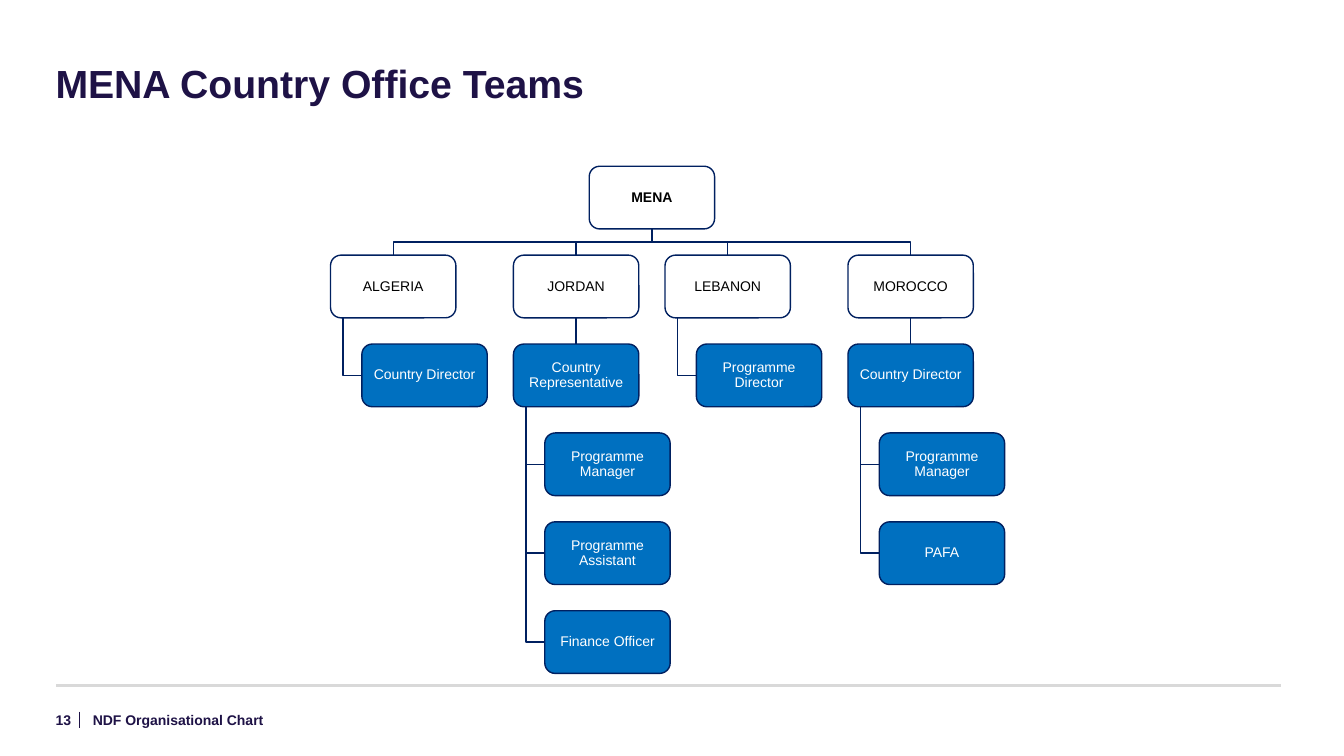
from pptx import Presentation
from pptx.dml.color import RGBColor
from pptx.enum.shapes import MSO_CONNECTOR, MSO_SHAPE
from pptx.enum.text import MSO_ANCHOR, PP_ALIGN
from pptx.oxml.ns import qn
from pptx.util import Cm, Pt
from lxml import etree

ROUNDED = MSO_SHAPE.ROUNDED_RECTANGLE
STRAIGHT = MSO_CONNECTOR.STRAIGHT
TOP, MIDDLE = MSO_ANCHOR.TOP, MSO_ANCHOR.MIDDLE
LEFT, CENTER = PP_ALIGN.LEFT, PP_ALIGN.CENTER

FONT = "Arial"
COLOURS = {"title": "1E1246", "rule": "D9D9D9", "outline": "002060",
           "post": "0070C0", "white": "FFFFFF", "black": "000000"}

# Chart grid, in centimetres
BOX_WIDTH, BOX_HEIGHT, GAP = 3.16, 1.58, 0.66
INDENT = BOX_WIDTH / 4
SPINE = BOX_WIDTH / 10
CHART_LEFT, CHART_TOP = 8.33, 4.19

# Country, its lead, whether the lead hangs to the side, and the lead's team
COUNTRIES = [
    ("ALGERIA", "Country Director", True, []),
    ("JORDAN", "Country Representative", False,
     ["Programme Manager", "Programme Assistant", "Finance Officer"]),
    ("LEBANON", "Programme Director", True, []),
    ("MOROCCO", "Country Director", False, ["Programme Manager", "PAFA"]),
]


def colour(name):
    return RGBColor.from_string(COLOURS[name])


def row_top(row):
    return CHART_TOP + row * (BOX_HEIGHT + GAP)


def write(frame, text, size, ink, bold=False, align=LEFT, anchor=MIDDLE,
          inset=0, spacing=None):
    frame.word_wrap = True
    frame.vertical_anchor = anchor
    frame.margin_left = frame.margin_right = Cm(inset)
    frame.margin_top = frame.margin_bottom = Cm(inset)
    para = frame.paragraphs[0]
    para.alignment = align
    if spacing:
        para.line_spacing = spacing
    span = para.add_run()
    span.text = text
    span.font.name, span.font.size, span.font.bold = FONT, Pt(size), bold
    span.font.color.rgb = colour(ink)


def add_label(page, left, top, width, height, text, size, **style):
    box = page.shapes.add_textbox(Cm(left), Cm(top), Cm(width), Cm(height))
    write(box.text_frame, text, size, "title", bold=True, **style)


def add_line(page, start, end, ink="outline", weight=1):
    line = page.shapes.add_connector(STRAIGHT, *map(Cm, start + end))
    line.line.color.rgb = colour(ink)
    line.line.width = Pt(weight)
    etree.SubElement(line._element.spPr, qn("a:effectLst"))


def add_elbow(page, *points):
    first, *rest = [(Cm(x), Cm(y)) for x, y in points]
    builder = page.shapes.build_freeform(*first)
    builder.add_line_segments(rest, close=False)
    elbow = builder.convert_to_shape()
    elbow.shadow.inherit = False
    elbow.fill.background()
    elbow.line.color.rgb = colour("outline")
    elbow.line.width = Pt(1)


def add_box(page, left, row, text, fill="post", ink="white", bold=False):
    box = page.shapes.add_shape(ROUNDED, Cm(left), Cm(row_top(row)),
                                Cm(BOX_WIDTH), Cm(BOX_HEIGHT))
    box.shadow.inherit = False
    box.fill.solid()
    box.fill.fore_color.rgb = colour(fill)
    box.line.color.rgb = colour("outline")
    box.line.width = Pt(1)
    write(box.text_frame, text, 10, ink, bold, CENTER, inset=0.03, spacing=0.9)


def add_side_link(page, left, parent_row, child_row):
    spine = left + SPINE
    level = row_top(child_row) + BOX_HEIGHT / 2
    add_elbow(page, (spine, row_top(parent_row) + BOX_HEIGHT),
              (spine, level), (left + INDENT, level))


def add_country(page, left, root_centre, country, lead, lead_aside, team):
    centre = left + BOX_WIDTH / 2
    bus = row_top(1) - GAP / 2

    # Links
    add_elbow(page, (root_centre, row_top(1) - GAP), (root_centre, bus),
              (centre, bus), (centre, row_top(1)))
    if lead_aside:
        add_side_link(page, left, 1, 2)
    else:
        add_line(page, (centre, row_top(2) - GAP), (centre, row_top(2)))
    for row in range(3, 3 + len(team)):
        add_side_link(page, left, 2, row)

    # Boxes
    add_box(page, left, 1, country, "white", "black")
    add_box(page, left + INDENT * lead_aside, 2, lead)
    for row, post in enumerate(team, 3):
        add_box(page, left + INDENT, row, post)


def add_chart_tree(page):
    # Columns widen where the lead hangs to the side
    lefts = [CHART_LEFT]
    for _, _, lead_aside, _ in COUNTRIES[:-1]:
        lefts.append(lefts[-1] + BOX_WIDTH + GAP + INDENT * lead_aside)
    root_left = (lefts[0] + lefts[-1]) / 2
    for left, country in zip(lefts, COUNTRIES):
        add_country(page, left, root_left + BOX_WIDTH / 2, *country)
    add_box(page, root_left, 0, "MENA", "white", "black", bold=True)


def main():
    deck = Presentation()
    deck.slide_width, deck.slide_height = Cm(33.87), Cm(19.05)
    page = deck.slides.add_slide(deck.slide_layouts[6])

    # Title
    add_label(page, 1.4, 1.63, 30.86, 2.54, "MENA Country Office Teams", 28,
              anchor=TOP, spacing=0.9)

    # Footer
    add_line(page, (2.01, 17.93), (2.01, 18.34), "title", 0.75)
    add_line(page, (1.42, 17.27), (32.28, 17.27), "rule", 2)
    add_label(page, 2.34, 17.83, 12.9, 0.61, "NDF Organisational Chart", 10)
    add_label(page, 1.4, 17.83, 0.94, 0.61, "13", 10)

    add_chart_tree(page)
    deck.save("out.pptx")


if __name__ == "__main__":
    main()
